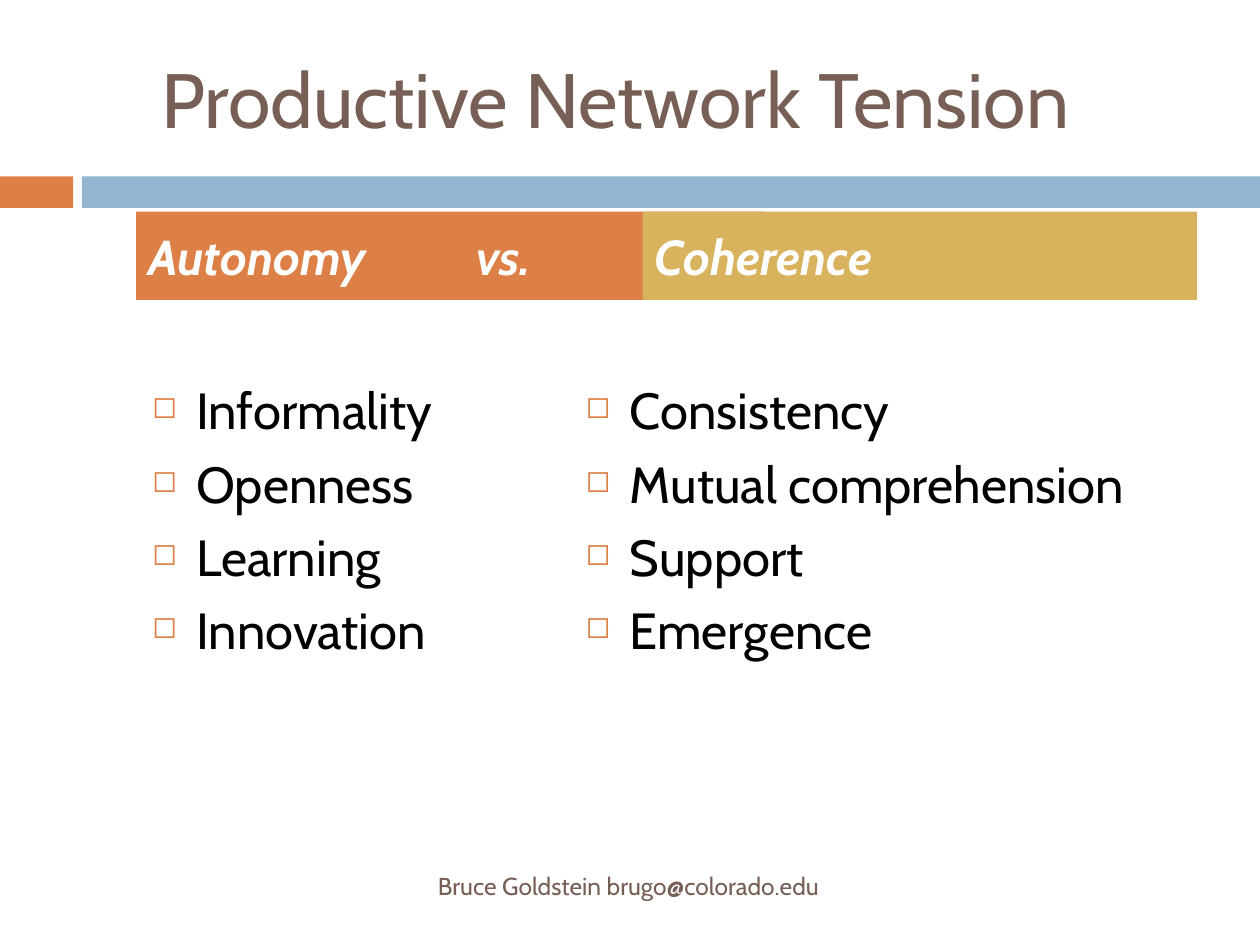
from lxml import etree
from pptx import Presentation
from pptx.dml.color import RGBColor
from pptx.enum.shapes import MSO_SHAPE
from pptx.enum.text import MSO_ANCHOR, PP_ALIGN
from pptx.oxml.ns import qn
from pptx.util import Inches, Pt

RECTANGLE = MSO_SHAPE.RECTANGLE
TOP, MIDDLE = MSO_ANCHOR.TOP, MSO_ANCHOR.MIDDLE
LEFT, CENTER, RIGHT = PP_ALIGN.LEFT, PP_ALIGN.CENTER, PP_ALIGN.RIGHT

FONT = "Cabin"
ORANGE, BLUE, GOLD = "DD8047", "94B6D2", "D8B25C"
BROWN, WHITE, BLACK = "775F55", "FFFFFF", "000000"
BAND_TOP, BAND_HEIGHT = 1.4, 0.25
HEADER_TOP, HEADER_HEIGHT = 1.68, 0.7
LIST_TOP, LIST_HEIGHT = 2.38, 4.32


def rgb(color):
    return RGBColor.from_string(color)


def add_child(parent, tag, **attributes):
    return etree.SubElement(parent, qn(tag), attributes)


def add_bar(slide, left, top, width, height, color):
    bar = slide.shapes.add_shape(
        RECTANGLE, Inches(left), Inches(top), Inches(width), Inches(height))
    bar.shadow.inherit = False
    bar.fill.solid()
    bar.fill.fore_color.rgb = rgb(color)
    bar.line.fill.background()
    return bar


def add_text_box(slide, left, top, width, height, anchor=MIDDLE):
    box = slide.shapes.add_textbox(
        Inches(left), Inches(top), Inches(width), Inches(height))
    box.text_frame.word_wrap = True
    box.text_frame.vertical_anchor = anchor
    return box


def write(para, text, size, color, align=LEFT):
    para.text = text
    para.alignment = align
    para.font.name = FONT
    para.font.size = Pt(size)
    para.font.color.rgb = rgb(color)


def add_bullet(para):
    """Give the paragraph a small orange square with a hanging indent."""
    properties = para._p.get_or_add_pPr()
    properties.set("marL", str(Inches(0.35)))
    properties.set("indent", str(-Inches(0.35)))
    add_child(add_child(properties, "a:buClr"), "a:srgbClr", val=ORANGE)
    add_child(properties, "a:buSzPct", val="60000")
    add_child(properties, "a:buChar", char="◻")


def add_tab_stop(para, position):
    tabs = add_child(para._p.get_or_add_pPr(), "a:tabLst")
    add_child(tabs, "a:tab", pos=str(Inches(position)), algn="l")


def add_header(slide, left, width, color, text):
    header = add_bar(slide, left, HEADER_TOP, width, HEADER_HEIGHT, color)
    header.text_frame.vertical_anchor = MIDDLE
    para = header.text_frame.paragraphs[0]
    add_tab_stop(para, 2.6)
    write(para, text, 28, WHITE)
    para.space_before = Pt(7)
    para.font.bold = para.font.italic = True


def add_list(slide, left, width, items):
    frame = add_text_box(
        slide, left, LIST_TOP, width, LIST_HEIGHT, TOP).text_frame
    frame.margin_top = Inches(0.63)
    for index, item in enumerate(items):
        para = frame.add_paragraph() if index else frame.paragraphs[0]
        add_bullet(para)
        write(para, item, 29, BLACK)
        para.space_before = Pt(7)


def main():
    deck = Presentation()
    deck.slide_width, deck.slide_height = Inches(10), Inches(7.5)
    slide = deck.slides.add_slide(deck.slide_layouts[6])

    add_bar(slide, 0, BAND_TOP, 0.58, BAND_HEIGHT, ORANGE)
    add_bar(slide, 0.65, BAND_TOP, 9.35, BAND_HEIGHT, BLUE)

    title = add_text_box(slide, 0, 0.3, 9.5, 0.95).text_frame
    title.margin_left = Inches(0.37)
    write(title.paragraphs[0], "Productive Network Tension", 44, BROWN, CENTER)

    add_header(slide, 1.08, 4.99, ORANGE, "Autonomy\tvs.")
    add_list(slide, 1.11, 4.79,
             ["Informality", "Openness", "Learning", "Innovation"])
    add_header(slide, 5.1, 4.4, GOLD, "Coherence")
    add_list(slide, 4.55, 5.45,
             ["Consistency", "Mutual comprehension", "Support", "Emergence"])

    footer = add_text_box(slide, 0.67, 6.83, 5.93, 0.4).text_frame
    write(footer.paragraphs[0], "Bruce Goldstein brugo@colorado.edu",
          14, BROWN, RIGHT)

    deck.save("out.pptx")


if __name__ == "__main__":
    main()
